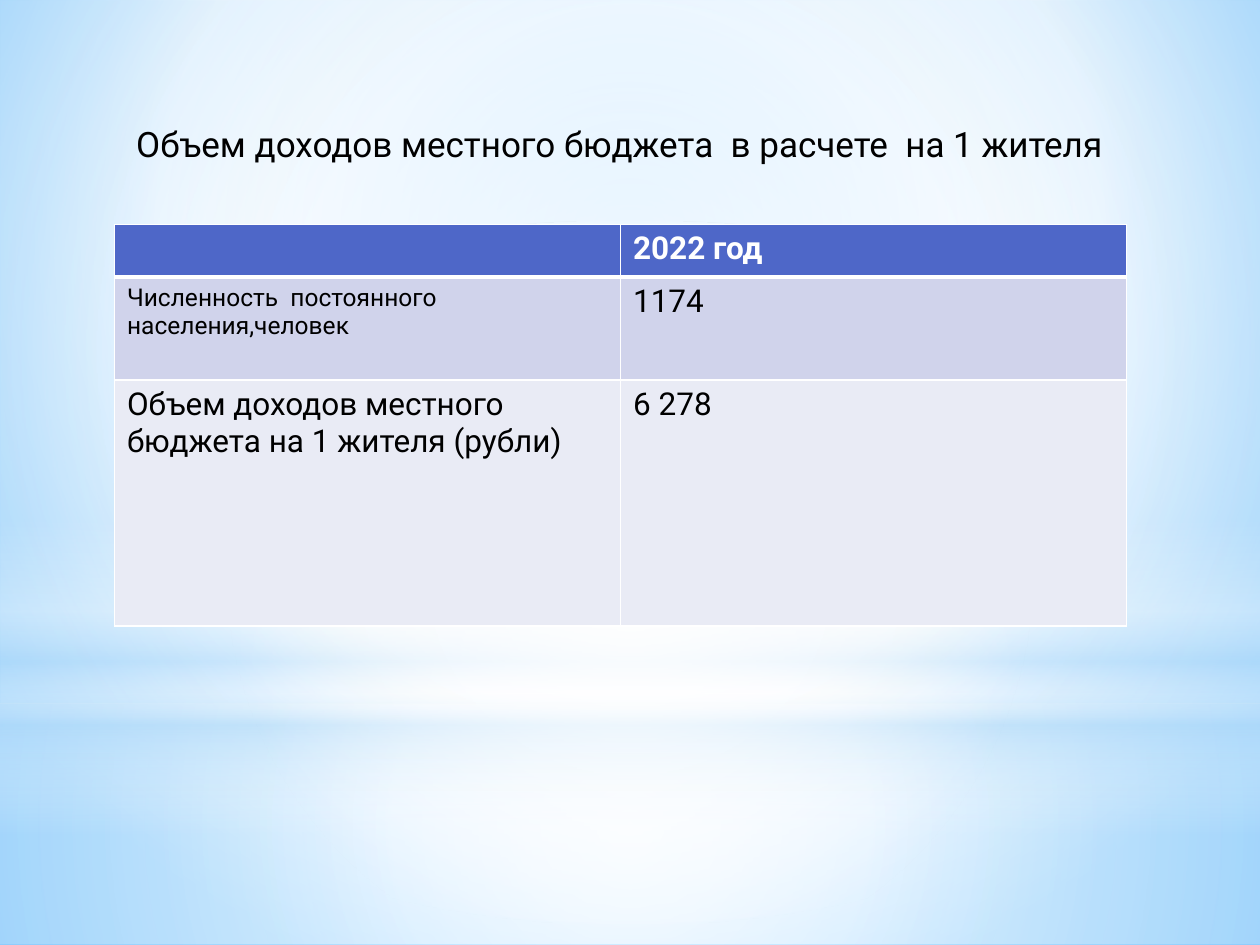
import dataclasses
import pptx
import pptx.dml.color
import pptx.enum.shapes
import pptx.enum.text
import pptx.oxml
import pptx.oxml.ns
import pptx.util
from pptx.util import Pt


@dataclasses.dataclass(frozen=True)
class Theme:
    font: str = "Roboto"
    black: str = "000000"
    white: str = "FFFFFF"
    header: str = "4E67C8"
    rows: tuple = ("D0D3EB", "E9EBF5")
    sky: str = "9ED5FF"
    deep_sky: str = "5BB9FF"
    haze: str = "B4DCFA"
    title_size: int = 20
    table_size: int = 18
    small_size: int = 14


theme = Theme()
namespace = pptx.oxml.ns.nsdecls("a")
color = pptx.dml.color.RGBColor.from_string


def set_gradient(properties, stops, focus=None):
    stop_xml = "".join(
        f'<a:gs pos="{position * 1000}"><a:srgbClr val="{value}">'
        f'<a:alpha val="{alpha * 1000}"/></a:srgbClr></a:gs>'
        for position, value, alpha in stops
    )
    if focus:
        sides = " ".join(f'{side}="{share * 1000}"' for side, share in zip("ltrb", focus))
        direction = f'<a:path path="circle"><a:fillToRect {sides}/></a:path>'
    else:
        direction = '<a:lin ang="5400000" scaled="0"/>'
    gradient = pptx.oxml.parse_xml(
        f'<a:gradFill {namespace} rotWithShape="1"><a:gsLst>{stop_xml}</a:gsLst>{direction}</a:gradFill>'
    )
    solid = properties.find(pptx.oxml.ns.qn("a:solidFill"))
    properties.replace(solid, gradient)


def set_font(paragraph, size, value, bold=False):
    paragraph.font.name = theme.font
    paragraph.font.size = Pt(size)
    paragraph.font.bold = bold
    paragraph.font.color.rgb = color(value)


presentation = pptx.Presentation()
presentation.slide_width = Pt(720)
presentation.slide_height = Pt(540)
slide = presentation.slides.add_slide(presentation.slide_layouts[5])

slide.background.fill.solid()
set_gradient(
    slide.element.xpath(".//p:bgPr")[0],
    [(0, theme.sky, 100), (60, theme.white, 100), (100, theme.deep_sky, 100)],
    (20, 10, 20, 60),
)

center = (50, 50, 50, 50)
rectangle = pptx.enum.shapes.MSO_SHAPE.RECTANGLE
oval = pptx.enum.shapes.MSO_SHAPE.OVAL
glows = [
    (rectangle, 402, 138, [(0, theme.white, 91), (37, theme.white, 76), (100, theme.haze, 79)], center),
    (rectangle, 0, 402, [(0, theme.white, 89), (48, theme.white, 62), (100, theme.haze, 79)], center),
    (rectangle, 297, 180, [(0, theme.white, 0), (29, theme.white, 30), (45, theme.haze, 40),
                           (55, theme.white, 26), (65, theme.haze, 60), (100, theme.white, 0)], None),
    (oval, 126, 402, [(0, theme.white, 100), (56, theme.white, 0)], center),
]
for kind, top, height, stops, focus in glows:
    shape = slide.shapes.add_shape(kind, Pt(0), Pt(top), Pt(720), Pt(height))
    shape.shadow.inherit = False
    shape.line.fill.background()
    shape.fill.solid()
    set_gradient(shape.element.spPr, stops, focus)

title = slide.shapes.title
title.element.getparent().append(title.element)
title.left, title.top, title.width, title.height = Pt(70.6), Pt(66.2), Pt(584.6), Pt(31.5)
title.text_frame.text = "Объем доходов местного бюджета  в расчете  на 1 жителя"
title.text_frame.word_wrap = True
title.text_frame.auto_size = pptx.enum.text.MSO_AUTO_SIZE.SHAPE_TO_FIT_TEXT
title.text_frame.vertical_anchor = pptx.enum.text.MSO_ANCHOR.TOP
title.text_frame.paragraphs[0].alignment = pptx.enum.text.PP_ALIGN.LEFT
set_font(title.text_frame.paragraphs[0], theme.title_size, theme.black)

rows = [
    (30, theme.header, ["", "2022 год"]),
    (59, theme.rows[0], ["Численность  постоянного населения,человек", "1174"]),
    (140.4, theme.rows[1], ["Объем доходов местного бюджета на 1 жителя (рубли)", "6 278"]),
]
table = slide.shapes.add_table(3, 2, Pt(65.4), Pt(128.2), Pt(578.4), Pt(229.4)).table
table.horz_banding = False
for column in table.columns:
    column.width = Pt(289.2)
for row_index, (height, fill, texts) in enumerate(rows):
    table.rows[row_index].height = Pt(height)
    is_header = row_index == 0
    borders = {"L": 1, "R": 1, "T": 3 if row_index == 1 else 1, "B": 3 if is_header else 1}
    for column_index, text in enumerate(texts):
        cell = table.cell(row_index, column_index)
        cell.text = text
        is_small = (row_index, column_index) == (1, 0)
        set_font(
            cell.text_frame.paragraphs[0],
            theme.small_size if is_small else theme.table_size,
            theme.white if is_header else theme.black,
            is_header,
        )
        cell_properties = cell._tc.get_or_add_tcPr()
        for side, width in borders.items():
            cell_properties.append(pptx.oxml.parse_xml(
                f'<a:ln{side} {namespace} w="{Pt(width)}"><a:solidFill>'
                f'<a:srgbClr val="{theme.white}"/></a:solidFill></a:ln{side}>'
            ))
        cell.fill.solid()
        cell.fill.fore_color.rgb = color(fill)

presentation.save("out.pptx")
